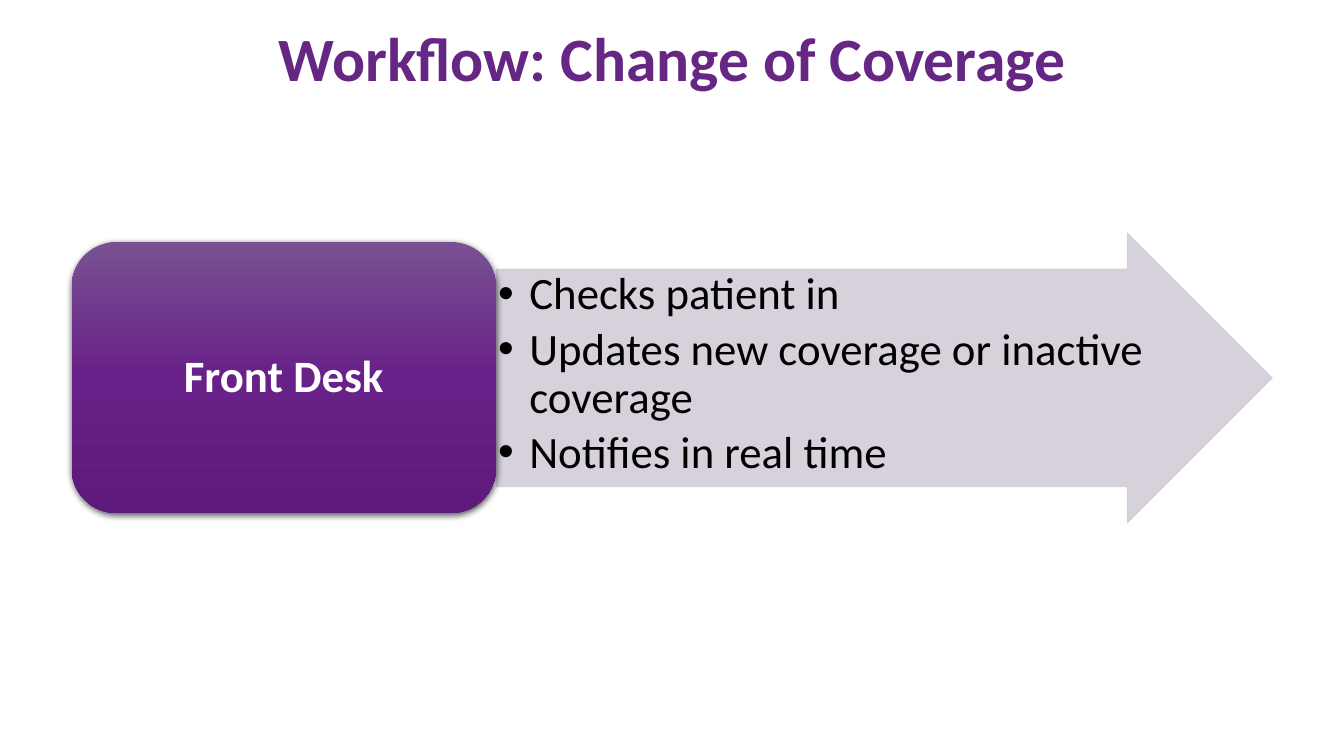
from lxml.etree import SubElement
from pptx import Presentation
from pptx.dml.color import RGBColor
from pptx.enum.shapes import MSO_SHAPE
from pptx.enum.text import MSO_ANCHOR, MSO_AUTO_SIZE, PP_ALIGN
from pptx.oxml import parse_xml
from pptx.oxml.ns import nsdecls, qn
from pptx.util import Inches, Pt

COLORS = {
    "title": "662683",
    "arrow": "D3CDD9",
    "box_top": "795192",
    "box_middle": "682188",
    "box_bottom": "5E1A7D",
    "black": "000000",
    "white": "FFFFFF",
}


def place(shape, left, top, width, height):
    shape.left, shape.top = Inches(left), Inches(top)
    shape.width, shape.height = Inches(width), Inches(height)


def format_text(frame, size, color, bold, align, anchor, margins, space_after=0):
    frame.word_wrap = True
    frame.auto_size = MSO_AUTO_SIZE.NONE
    frame.vertical_anchor = anchor
    frame.margin_left = frame.margin_right = Inches(margins[0])
    frame.margin_top = frame.margin_bottom = Inches(margins[1])
    for paragraph in frame.paragraphs:
        paragraph.alignment = align
        paragraph.line_spacing = 0.9
        paragraph.space_before = Pt(0)
        paragraph.space_after = Pt(space_after)
        for run in paragraph.runs:
            run.font.name = "Calibri"
            run.font.size = Pt(size)
            run.font.bold = bold
            run.font.color.rgb = RGBColor.from_string(COLORS[color])


prs = Presentation()
prs.slide_width, prs.slide_height = Inches(13.33), Inches(7.5)
slide = prs.slides.add_slide(prs.slide_layouts[1])

title = slide.shapes.title
place(title, 0.92, 0.1, 11.5, 1.02)
title.text_frame.text = "Workflow: Change of Coverage"
format_text(title.text_frame, 44, "title", True, PP_ALIGN.CENTER,
            MSO_ANCHOR.MIDDLE, (0.1, 0.05))

arrow = slide.shapes.add_shape(MSO_SHAPE.RIGHT_ARROW, Inches(4.92), Inches(2.31),
                               Inches(7.7), Inches(2.88))
arrow.adjustments[0], arrow.adjustments[1] = 0.75, 0.5
arrow.shadow.inherit = False
arrow.line.width = Pt(0.5)
for paint in (arrow.fill, arrow.line.fill):
    paint.solid()
    paint.fore_color.rgb = RGBColor.from_string(COLORS["arrow"])
for color in arrow._element.spPr.iter(qn("a:srgbClr")):
    SubElement(color, qn("a:alpha"), val="90000")

tasks = slide.placeholders[1]
arrow._element.addnext(tasks._element)
place(tasks, 4.92, 2.67, 6.62, 2.16)
tasks.text_frame.text = "\n".join([
    "Checks patient in",
    "Updates new coverage or inactive coverage",
    "Notifies in real time",
])
for task in tasks.text_frame.paragraphs:
    properties = task._p.get_or_add_pPr()
    properties.set("marL", str(Inches(0.31)))
    properties.set("indent", str(-Inches(0.31)))
    SubElement(properties, qn("a:buChar"), char="•")
format_text(tasks.text_frame, 32, "black", False, PP_ALIGN.LEFT,
            MSO_ANCHOR.TOP, (0.02, 0.02), space_after=4.8)

front_desk = slide.shapes.add_shape(MSO_SHAPE.ROUNDED_RECTANGLE, Inches(0.71), Inches(2.4),
                                    Inches(4.21), Inches(2.69))
front_desk.line.fill.background()
stops = "".join(
    f'<a:gs pos="{position}"><a:srgbClr val="{COLORS[name]}"/></a:gs>'
    for position, name in [(0, "box_top"), (50000, "box_middle"), (100000, "box_bottom")]
)
gradient = parse_xml(
    f'<a:gradFill {nsdecls("a")} rotWithShape="1"><a:gsLst>{stops}</a:gsLst>'
    '<a:lin ang="5400000" scaled="0"/></a:gradFill>'
)
front_desk._element.spPr.find(qn("a:prstGeom")).addnext(gradient)
shadow = parse_xml(
    f'<a:effectLst {nsdecls("a")}><a:outerShdw blurRad="{Pt(4.5)}" dist="{Pt(1.5)}" '
    f'dir="5400000" rotWithShape="0"><a:srgbClr val="{COLORS["black"]}">'
    '<a:alpha val="63000"/></a:srgbClr></a:outerShdw></a:effectLst>'
)
front_desk._element.spPr.append(shadow)
front_desk.text_frame.text = "Front Desk"
format_text(front_desk.text_frame, 32, "white", True, PP_ALIGN.CENTER,
            MSO_ANCHOR.MIDDLE, (0.13, 0.07))

prs.save("out.pptx")
